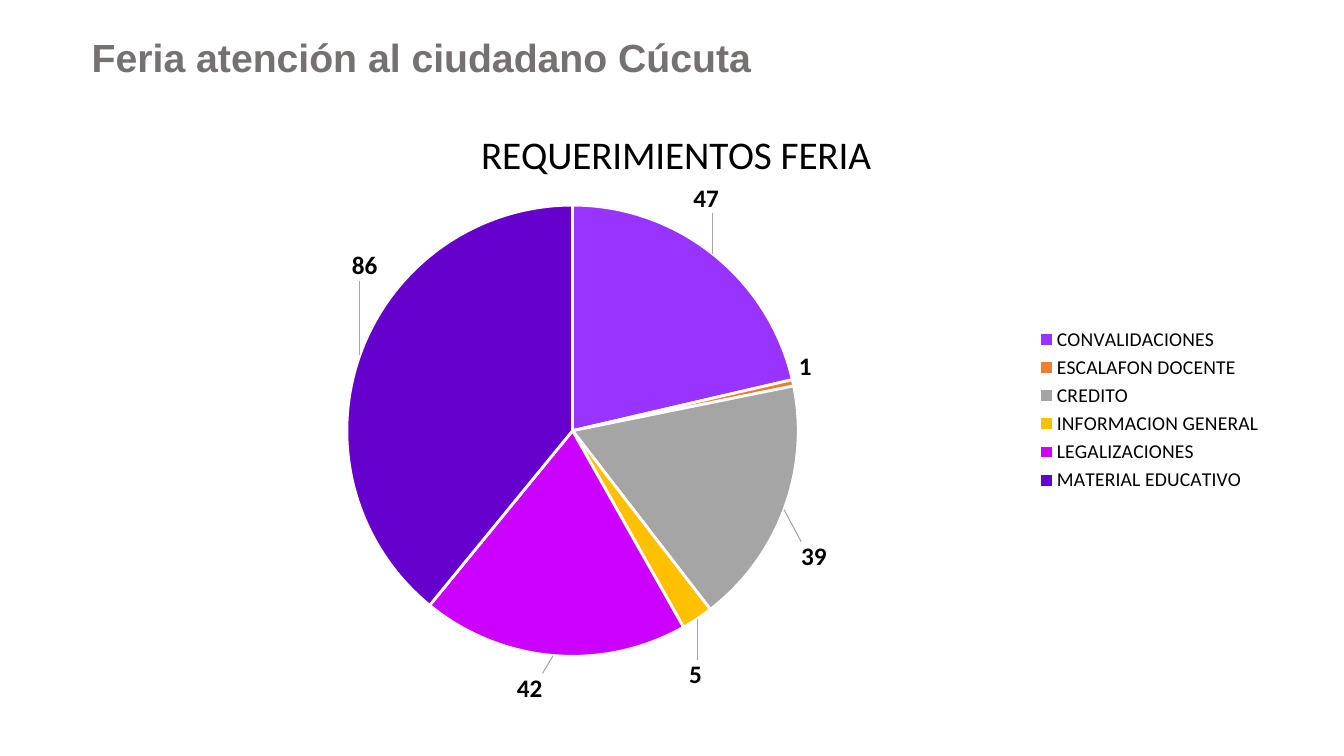
from lxml.etree import SubElement
from pptx import Presentation
from pptx.chart.data import CategoryChartData
from pptx.dml.color import RGBColor
from pptx.enum.chart import XL_CHART_TYPE, XL_LABEL_POSITION, XL_LEGEND_POSITION
from pptx.enum.text import MSO_ANCHOR, MSO_AUTO_SIZE, PP_ALIGN
from pptx.oxml.ns import qn
from pptx.util import Inches, Pt

COLORS = {
    "heading": "767171",
    "text": "000000",
    "border": "FFFFFF",
    "leader": "A6A6A6",
}

REQUESTS = [
    ("CONVALIDACIONES", 47, "9933FF", (-0.02, -0.06)),
    ("ESCALAFON DOCENTE", 1, "ED7D31", None),
    ("CREDITO", 39, "A5A5A5", (0.01, 0.05)),
    ("INFORMACION GENERAL", 5, "FFC000", (-0.01, 0.06)),
    ("LEGALIZACIONES", 42, "CC00FF", (-0.02, 0.02)),
    ("MATERIAL EDUCATIVO", 86, "6600CC", (0.02, -0.12)),
]


def color(value):
    return RGBColor.from_string(COLORS.get(value, value))


def set_font(font, size, name="Calibri", fill="text", bold=False):
    font.size = Pt(size)
    font.name = name
    font.bold = bold
    font.color.rgb = color(fill)


def write_text(frame, text, align=PP_ALIGN.LEFT, **font_format):
    para = frame.paragraphs[0]
    para.alignment = align
    span = para.add_run()
    span.text = text
    set_font(span.font, **font_format)


def add_layout(parent, position, **entries):
    for old in parent.findall(qn("c:layout")):
        parent.remove(old)
    layout = SubElement(parent, qn("c:layout"))
    parent.insert(position, layout)
    manual = SubElement(layout, qn("c:manualLayout"))
    for tag, value in entries.items():
        SubElement(manual, qn(f"c:{tag}")).set("val", str(value))


def add_heading(page, text):
    box = page.shapes.title
    box.left, box.top = Inches(0.81), Inches(0.28)
    box.width, box.height = Inches(6.82), Inches(0.57)
    frame = box.text_frame
    frame.word_wrap = False
    frame.auto_size = MSO_AUTO_SIZE.SHAPE_TO_FIT_TEXT
    frame.vertical_anchor = MSO_ANCHOR.TOP
    write_text(frame, text, size=28, name="Arial", fill="heading", bold=True)
    frame.paragraphs[0].line_spacing = 1.0


def format_labels(series):
    labels = series.data_labels
    labels.show_value = True
    labels.position = XL_LABEL_POSITION.OUTSIDE_END
    set_font(labels.font, 18, bold=True)
    for index, (_, _, _, offset) in enumerate(REQUESTS):
        if offset:
            label = series.points[index].data_label
            label.position = XL_LABEL_POSITION.OUTSIDE_END
            set_font(label.font, 18, bold=True)
    moves = [offset for *_, offset in REQUESTS if offset]
    for element, (x, y) in zip(labels._element.findall(qn("c:dLbl")), moves):
        add_layout(element, 1, x=x, y=y)
    leaders = SubElement(labels._element, qn("c:leaderLines"))
    line = SubElement(SubElement(leaders, qn("c:spPr")), qn("a:ln"), w="9525")
    fill = SubElement(line, qn("a:solidFill"))
    SubElement(fill, qn("a:srgbClr")).set("val", COLORS["leader"])


def add_pie(page, title):
    data = CategoryChartData()
    data.categories = [name for name, *_ in REQUESTS]
    data.add_series("Series 1", [value for _, value, *_ in REQUESTS])
    chart = page.shapes.add_chart(
        XL_CHART_TYPE.PIE, Inches(1.14), Inches(1.08),
        Inches(11.49), Inches(5.97), data).chart
    set_font(chart.font, 10)

    write_text(chart.chart_title.text_frame, title, PP_ALIGN.CENTER, size=28)
    add_layout(chart.chart_title._element, 1,
               xMode="edge", yMode="edge", x=0.31, y=0.02)

    chart.has_legend = True
    chart.legend.position = XL_LEGEND_POSITION.RIGHT
    chart.legend.include_in_layout = False
    set_font(chart.legend.font, 14)

    plot = chart.plots[0]
    plot.vary_by_categories = True
    series = plot.series[0]
    for index, (_, _, fill, _) in enumerate(REQUESTS):
        shape = series.points[index].format
        shape.fill.solid()
        shape.fill.fore_color.rgb = color(fill)
        shape.line.color.rgb = color("border")
        shape.line.width = Pt(2)
    format_labels(series)
    add_layout(chart._chartSpace.chart.plotArea, 0, layoutTarget="inner",
               xMode="edge", yMode="edge", x=0.2, y=0.16, w=0.39, h=0.75)


def main():
    deck = Presentation()
    deck.slide_width, deck.slide_height = Inches(13.33), Inches(7.5)
    page = deck.slides.add_slide(deck.slide_layouts[5])
    add_heading(page, "Feria atención al ciudadano Cúcuta")
    add_pie(page, "REQUERIMIENTOS FERIA")
    deck.save("out.pptx")


if __name__ == "__main__":
    main()
